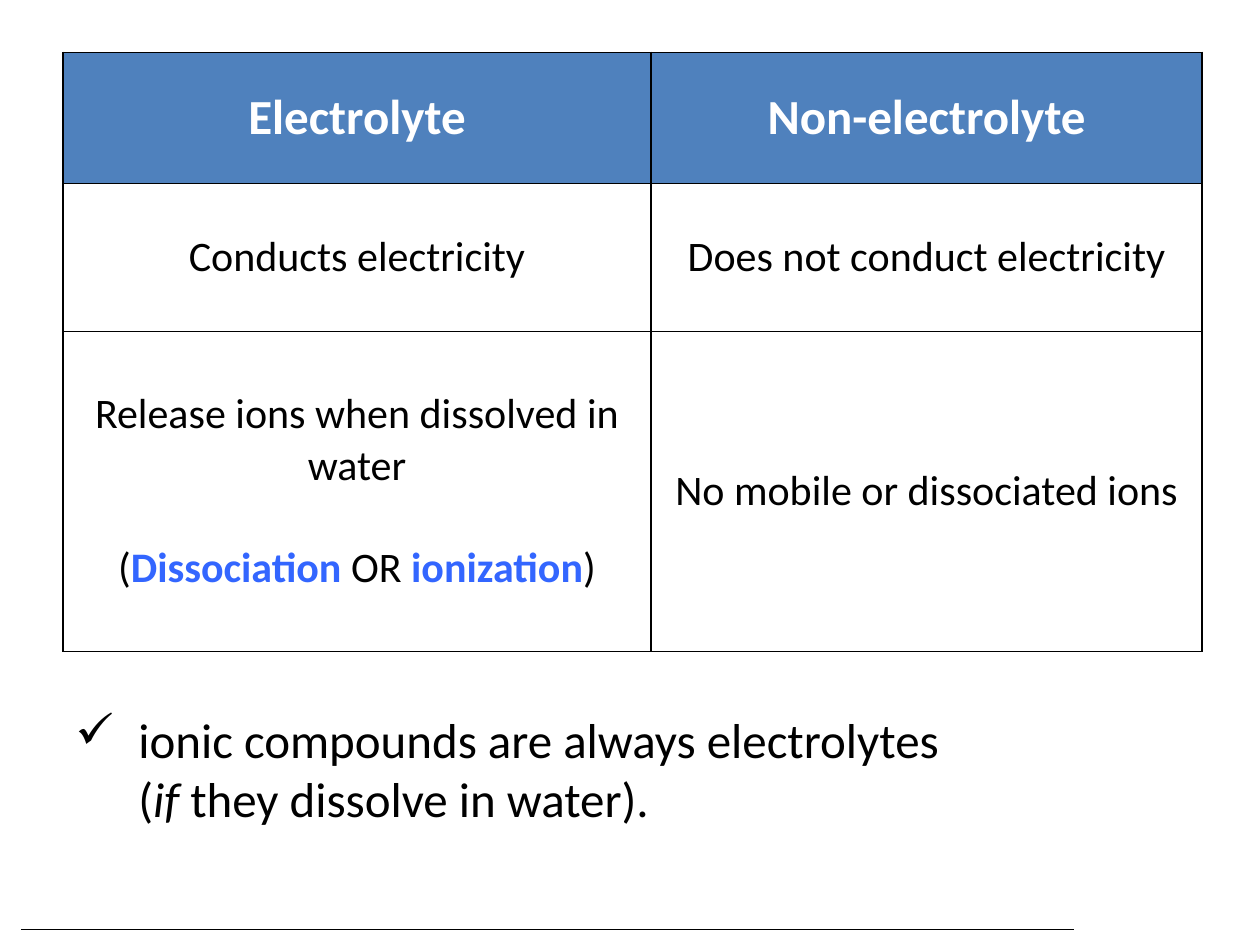
from lxml import etree
from pptx import Presentation
from pptx.dml.color import RGBColor
from pptx.enum.shapes import MSO_CONNECTOR
from pptx.enum.text import MSO_ANCHOR, PP_ALIGN
from pptx.oxml.ns import qn
from pptx.util import Pt

MID = MSO_ANCHOR.MIDDLE
CENTER = PP_ALIGN.CENTER
LINE = MSO_CONNECTOR.STRAIGHT
FONT = "Calibri"
HUES = {"ink": "000000", "paper": "FFFFFF", "head": "4F81BD", "term": "3366FF"}


def tint(name):
    return RGBColor.from_string(HUES[name])


class Deck:
    def __init__(self):
        self.prs = Presentation()
        self.prs.slide_width, self.prs.slide_height = Pt(720), Pt(540)
        self.slide = self.prs.slides.add_slide(self.prs.slide_layouts[6])

    def rule(self, x1, y1, x2, y2):
        line = self.slide.shapes.add_connector(LINE, Pt(x1), Pt(y1), Pt(x2), Pt(y2))
        line.line.color.rgb = tint("ink")
        line.line.width = Pt(0.75)
        etree.SubElement(line._element.spPr, qn("a:effectLst"))

    def words(self, para, runs, size, hue="ink"):
        for text, look in runs:
            run = para.add_run()
            run.text = text
            font = run.font
            font.name, font.size = FONT, Pt(size)
            font.bold = look.get("bold", False)
            font.italic = look.get("italic", False)
            font.color.rgb = tint(look.get("hue", hue))

    def edge(self, cell):
        props = cell._tc.get_or_add_tcPr()
        for side in ("lnL", "lnR", "lnT", "lnB"):
            line = etree.SubElement(props, qn(f"a:{side}"), w=str(Pt(1)))
            fill = etree.SubElement(line, qn("a:solidFill"))
            etree.SubElement(fill, qn("a:srgbClr"), val=HUES["ink"])

    def table(self, x, y, cols, rows, data):
        frame = self.slide.shapes.add_table(
            len(rows), len(cols), Pt(x), Pt(y), Pt(sum(cols)), Pt(sum(rows)))
        grid = frame.table
        for col, width in zip(grid.columns, cols):
            col.width = Pt(width)
        for row, height in zip(grid.rows, rows):
            row.height = Pt(height)
        for i, line in enumerate(data):
            size, hue, back = (24, "ink", "paper") if i else (28, "paper", "head")
            for j, paras in enumerate(line):
                cell = grid.cell(i, j)
                self.edge(cell)
                cell.fill.solid()
                cell.fill.fore_color.rgb = tint(back)
                cell.vertical_anchor = MID
                for k, runs in enumerate(paras):
                    body = cell.text_frame
                    para = body.add_paragraph() if k else body.paragraphs[0]
                    para.alignment = CENTER
                    if k:
                        para.space_before = Pt(29.3)
                    self.words(para, runs, size, hue)

    def note(self, x, y, width, height, paras, mark):
        body = self.slide.shapes.add_textbox(
            Pt(x), Pt(y), Pt(width), Pt(height)).text_frame
        body.word_wrap = True
        for k, runs in enumerate(paras):
            para = body.add_paragraph() if k else body.paragraphs[0]
            props = para._p.get_or_add_pPr()
            props.set("marL", str(Pt(36)))
            props.set("indent", str(0 if k else Pt(-36)))
            if not k:
                etree.SubElement(props, qn("a:buChar"), char=mark)
            self.words(para, runs, 28)

    def save(self):
        self.prs.save("out.pptx")


def main():
    bold = {"bold": True}
    term = {"bold": True, "hue": "term"}
    deck = Deck()
    deck.rule(12, 531, 614, 531)
    deck.table(36, 30, (336, 315), (75, 84.5, 183), [
        [[[("Electrolyte", bold)]], [[("Non-electrolyte", bold)]]],
        [[[("Conducts electricity", {})]], [[("Does not conduct electricity", {})]]],
        [[[("Release ions when dissolved in water", {})],
          [("(", {}), ("Dissociation ", term), ("OR ", {}),
           ("ionization", term), (")", {})]],
         [[("No mobile or dissociated ions", {})]]],
    ])
    deck.note(36, 402, 648, 75, [
        [("ionic compounds are always electrolytes", {})],
        [("(", {}), ("if", {"italic": True}), (" they dissolve in water).", {})],
    ], "✓")
    deck.save()


if __name__ == "__main__":
    main()
